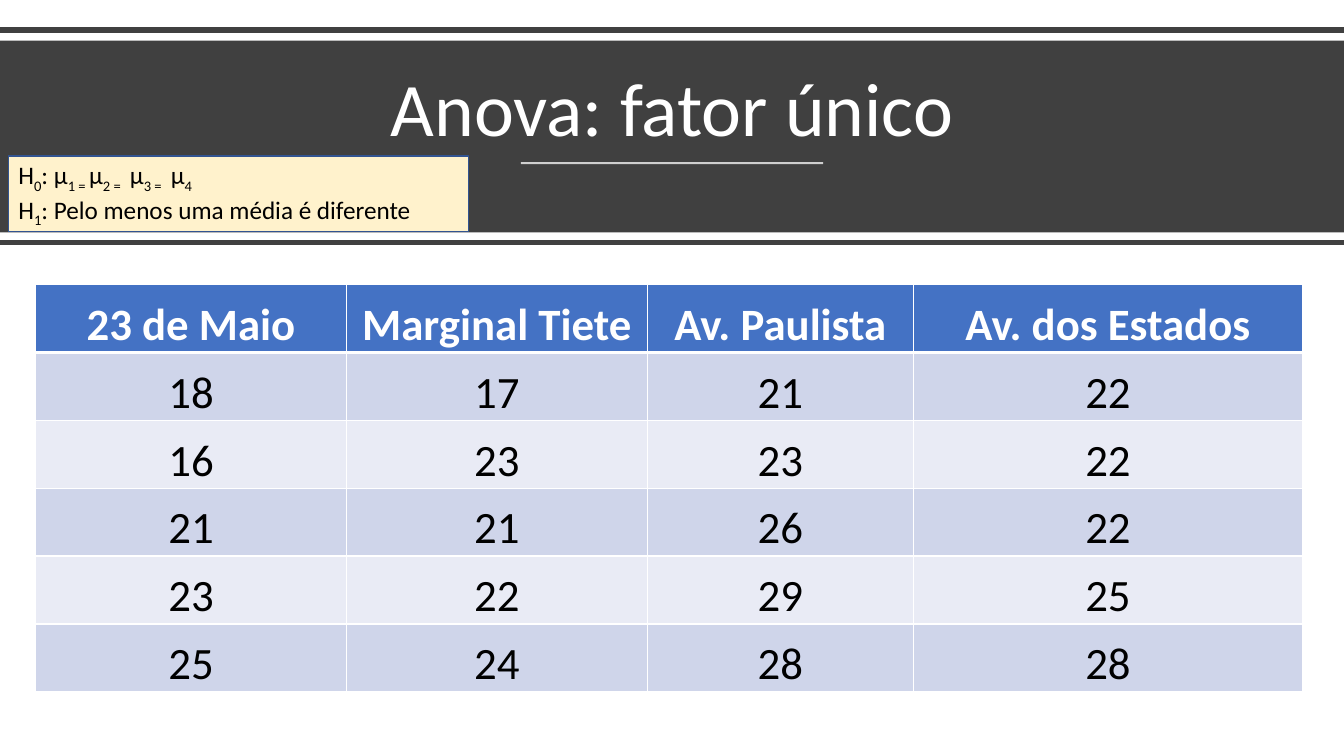
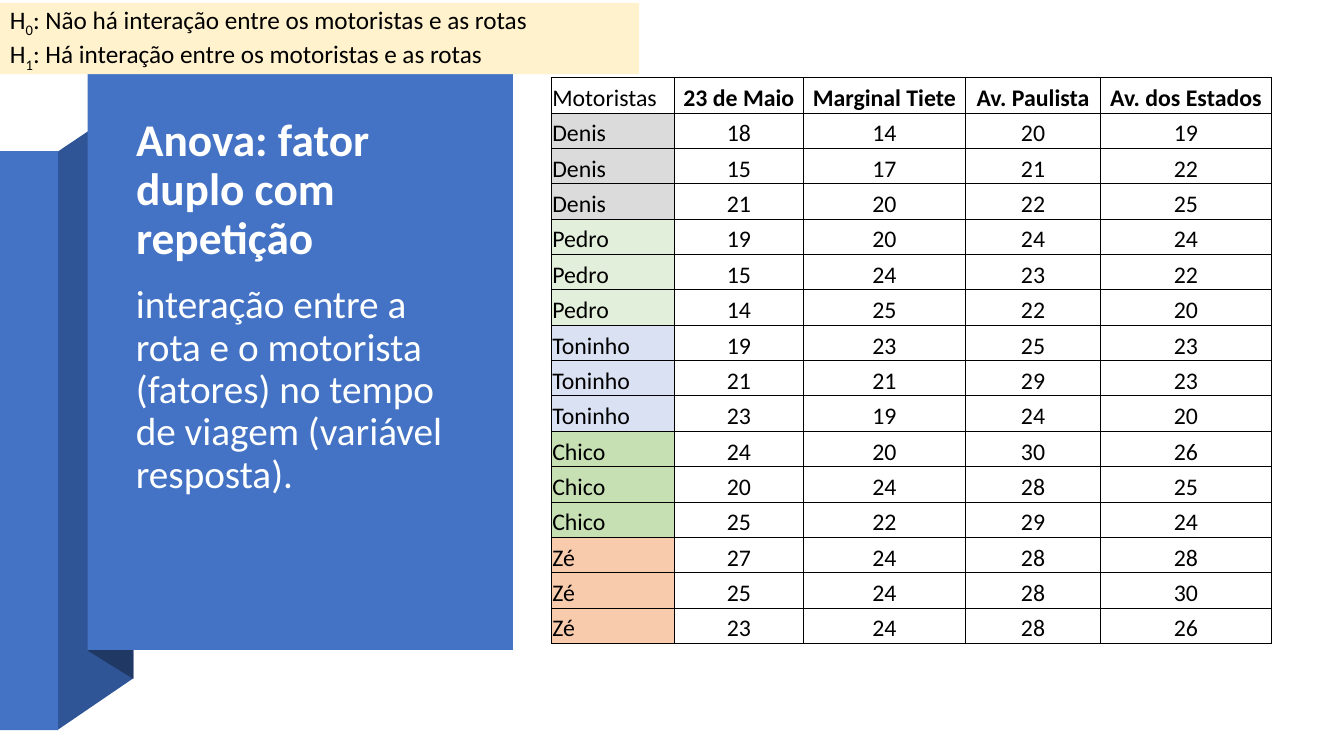
from dataclasses import dataclass
from typing import Optional

from lxml.etree import SubElement
from pptx import Presentation
from pptx.dml.color import RGBColor
from pptx.enum.shapes import MSO_CONNECTOR, MSO_SHAPE
from pptx.enum.text import MSO_ANCHOR as Anchor, MSO_AUTO_SIZE as AutoSize, PP_ALIGN as Align
from pptx.oxml.ns import qn
from pptx.util import Pt

COLORS = {
    "white": "FFFFFF",
    "soft_white": "FEFFFF",
    "black": "000000",
    "charcoal": "404040",
    "blue": "4472C4",
    "fold": "2F5597",
    "deep_fold": "203864",
    "note": "FFF2CC",
    "note_line": "325491",
    "band": "CFD5EA",
    "pale_band": "E9EBF5",
}
FONT = "Calibri"
SLIDE_WIDTH, SLIDE_HEIGHT = 960, 540
TITLE_ONLY = 5
ROUTES = ("23 de Maio", "Marginal Tiete", "Av. Paulista", "Av. dos Estados")


@dataclass(frozen=True)
class Frame:
    left: float
    top: float
    width: float
    height: float

    def lengths(self) -> tuple:
        return Pt(self.left), Pt(self.top), Pt(self.width), Pt(self.height)


@dataclass(frozen=True)
class Rule:
    left: float
    right: float
    top: float
    weight: float
    color: str
    opacity: int = 100


@dataclass(frozen=True)
class Driver:
    name: str
    color: str
    trips: tuple


@dataclass(frozen=True)
class CellStyle:
    size: float
    border: str
    weight: float
    inset: float


SINGLE_TRIPS = (
    (18, 17, 21, 22),
    (16, 23, 23, 22),
    (21, 21, 26, 22),
    (23, 22, 29, 25),
    (25, 24, 28, 28),
)
DRIVERS = (
    Driver("Denis", "DBDBDB", ((18, 14, 20, 19), (15, 17, 21, 22), (21, 20, 22, 25))),
    Driver("Pedro", "E2EFDA", ((19, 20, 24, 24), (15, 24, 23, 22), (14, 25, 22, 20))),
    Driver("Toninho", "D9E1F2", ((19, 23, 25, 23), (21, 21, 29, 23), (23, 19, 24, 20))),
    Driver("Chico", "C6E0B4", ((24, 20, 30, 26), (20, 24, 28, 25), (25, 22, 29, 24))),
    Driver("Zé", "F8CBAD", ((27, 24, 28, 28), (25, 24, 28, 30), (23, 24, 28, 26))),
)


def rgb(color: str) -> RGBColor:
    return RGBColor.from_string(COLORS.get(color, color))


def write(para, text: str, *, size: float, color: str = "black", bold: bool = False,
          align=Align.LEFT, line_spacing: float = 1.0, space_before: float = 0) -> None:
    """Text between bars alternates between normal and subscript."""
    para.alignment = align
    para.line_spacing = line_spacing
    para.space_before = Pt(space_before)
    for index, part in enumerate(text.split("|")):
        span = para.add_run()
        span.text = part
        span.font.name = FONT
        span.font.size = Pt(size)
        span.font.bold = bold
        span.font.color.rgb = rgb(color)
        if index % 2:
            span.font._element.set("baseline", "-25000")


def paint(shape, fill: str, line: Optional[str] = None) -> None:
    shape.shadow.inherit = False
    shape.fill.solid()
    shape.fill.fore_color.rgb = rgb(fill)
    if line:
        shape.line.color.rgb = rgb(line)
        shape.line.width = Pt(1)
    else:
        shape.line.fill.background()


def add_box(page, frame: Frame, fill: str, line: Optional[str] = None):
    box = page.shapes.add_shape(MSO_SHAPE.RECTANGLE, *frame.lengths())
    paint(box, fill, line)
    return box


def add_fold(page, points: tuple, fill: str) -> None:
    corners = [(Pt(x), Pt(y)) for x, y in points]
    builder = page.shapes.build_freeform(*corners[0], scale=1.0)
    builder.add_line_segments(corners[1:], close=True)
    paint(builder.convert_to_shape(), fill)


def add_rule(page, rule: Rule) -> None:
    line = page.shapes.add_connector(
        MSO_CONNECTOR.STRAIGHT, Pt(rule.left), Pt(rule.top), Pt(rule.right), Pt(rule.top))
    line.line.width = Pt(rule.weight)
    line.line.color.rgb = rgb(rule.color)
    properties = line._element.spPr
    if rule.opacity < 100:
        shade = properties.find(".//" + qn("a:srgbClr"))
        SubElement(shade, qn("a:alpha")).set("val", str(rule.opacity * 1000))
    SubElement(properties, qn("a:effectLst"))


def add_note(page, frame: Frame, lines: tuple, *, line: Optional[str] = None,
             align=Align.LEFT) -> None:
    text = add_box(page, frame, "note", line).text_frame
    text.word_wrap = True
    text.vertical_anchor = Anchor.MIDDLE
    for index, hypothesis in enumerate(lines):
        para = text.add_paragraph() if index else text.paragraphs[0]
        write(para, hypothesis, size=18, align=align)


def set_title(page, frame: Frame, text: str, *, size: float, anchor, align,
              bold: bool = False) -> None:
    title = page.shapes.title
    title.left, title.top, title.width, title.height = frame.lengths()
    title.element.getparent().append(title.element)
    body = title.text_frame
    body.word_wrap = True
    body.auto_size = AutoSize.NONE
    body.vertical_anchor = anchor
    write(body.paragraphs[0], text, size=size, color="white", bold=bold, align=align,
          line_spacing=0.9)


def add_grid(page, left: float, top: float, widths: tuple, row_height: float, rows: int):
    frame = Frame(left, top, sum(widths), row_height * rows)
    table = page.shapes.add_table(rows, len(widths), *frame.lengths()).table
    table.first_row = False
    table.horz_banding = False
    for column, width in zip(table.columns, widths):
        column.width = Pt(width)
    for row in table.rows:
        row.height = Pt(row_height)
    return table


def fill_cell(cell, value, style: CellStyle, *, fill: Optional[str] = None,
              color: str = "black", bold: bool = False, align=Align.CENTER,
              top: Optional[float] = None, bottom: Optional[float] = None) -> None:
    cell.margin_left = cell.margin_right = cell.margin_top = Pt(style.inset)
    cell.margin_bottom = 0
    cell.vertical_anchor = Anchor.BOTTOM
    properties = cell._tc.get_or_add_tcPr()
    weights = {"L": None, "R": None, "T": top, "B": bottom}
    for side, weight in weights.items():
        edge = SubElement(properties, qn(f"a:ln{side}"))
        edge.set("w", str(Pt(weight or style.weight)))
        paint_edge = SubElement(edge, qn("a:solidFill"))
        SubElement(paint_edge, qn("a:srgbClr")).set("val", COLORS[style.border])
    if fill:
        cell.fill.solid()
        cell.fill.fore_color.rgb = rgb(fill)
    else:
        cell.fill.background()
    write(cell.text_frame.paragraphs[0], str(value), size=style.size, color=color,
          bold=bold, align=align)


def build_single_factor(deck) -> None:
    page = deck.slides.add_slide(deck.slide_layouts[TITLE_ONLY])
    add_rule(page, Rule(0, SLIDE_WIDTH, 21.5, 4, "charcoal"))
    add_box(page, Frame(0, 29, SLIDE_WIDTH, 137), "charcoal")
    set_title(page, Frame(41.5, 39, 877, 73.5), "Anova: fator único", size=54,
              anchor=Anchor.BOTTOM, align=Align.CENTER)
    add_rule(page, Rule(372, 588, 116.5, 1.5, "white", 75))
    add_rule(page, Rule(0, SLIDE_WIDTH, 173.3, 4, "charcoal"))

    style = CellStyle(size=32, border="white", weight=1, inset=1.2)
    table = add_grid(page, 25.5, 203.3, (222, 215, 190, 278), 48.5, len(SINGLE_TRIPS) + 1)
    for column, route in enumerate(ROUTES):
        fill_cell(table.cell(0, column), route, style, fill="blue", color="white",
                  bold=True, bottom=3)
    for row, trips in enumerate(SINGLE_TRIPS, start=1):
        for column, minutes in enumerate(trips):
            fill_cell(table.cell(row, column), minutes, style,
                      fill="band" if row % 2 else "pale_band", top=3 if row == 1 else None)

    add_note(page, Frame(6, 111.5, 328.5, 54),
             ("H|0|: µ|1 = |µ|2 = | µ|3 = | µ|4", "H|1|: Pelo menos uma média é diferente"),
             line="note_line")


def build_two_factor(deck) -> None:
    page = deck.slides.add_slide(deck.slide_layouts[TITLE_ONLY])
    add_fold(page, ((41, 521.5), (95.3, 484.5), (95.3, 72), (41, 108.5)), "fold")
    add_box(page, Frame(0, 108, 41.5, 413.5), "blue")
    add_fold(page, ((63, 465), (95.3, 485), (95.3, 71), (63, 50.5)), "deep_fold")
    add_box(page, Frame(62.7, 50.5, 303.7, 413.7), "blue")
    set_title(page, Frame(90, 78.5, 260, 116), "Anova: fator duplo com repetição", size=32.4,
              anchor=Anchor.MIDDLE, align=Align.LEFT, bold=True)
    text = page.shapes.add_textbox(*Frame(90, 200, 252, 235.5).lengths()).text_frame
    text.word_wrap = True
    write(text.paragraphs[0],
          "interação entre a rota e o motorista (fatores) no tempo de viagem "
          "(variável resposta).",
          size=28, color="soft_white", line_spacing=0.9, space_before=10)

    style = CellStyle(size=17, border="black", weight=0.5, inset=0.7)
    entries = [(driver, trips) for driver in DRIVERS for trips in driver.trips]
    table = add_grid(page, 393.8, 55.4, (88, 92, 116, 96.3, 122.2), 25.27, len(entries) + 1)
    fill_cell(table.cell(0, 0), "Motoristas", style, align=Align.LEFT)
    for column, route in enumerate(ROUTES, start=1):
        fill_cell(table.cell(0, column), route, style, bold=True)
    for row, (driver, trips) in enumerate(entries, start=1):
        fill_cell(table.cell(row, 0), driver.name, style, fill=driver.color, align=Align.LEFT)
        for column, minutes in enumerate(trips, start=1):
            fill_cell(table.cell(row, column), minutes, style)

    add_note(page, Frame(0, 2, 456.5, 51),
             ("H|0|: Não há interação entre os motoristas e as rotas",
              "H|1|: Há interação entre os motoristas e as rotas"),
             align=Align.JUSTIFY)


def main() -> None:
    deck = Presentation()
    deck.slide_width = Pt(SLIDE_WIDTH)
    deck.slide_height = Pt(SLIDE_HEIGHT)
    build_single_factor(deck)
    build_two_factor(deck)
    deck.save("out.pptx")


if __name__ == "__main__":
    main()
